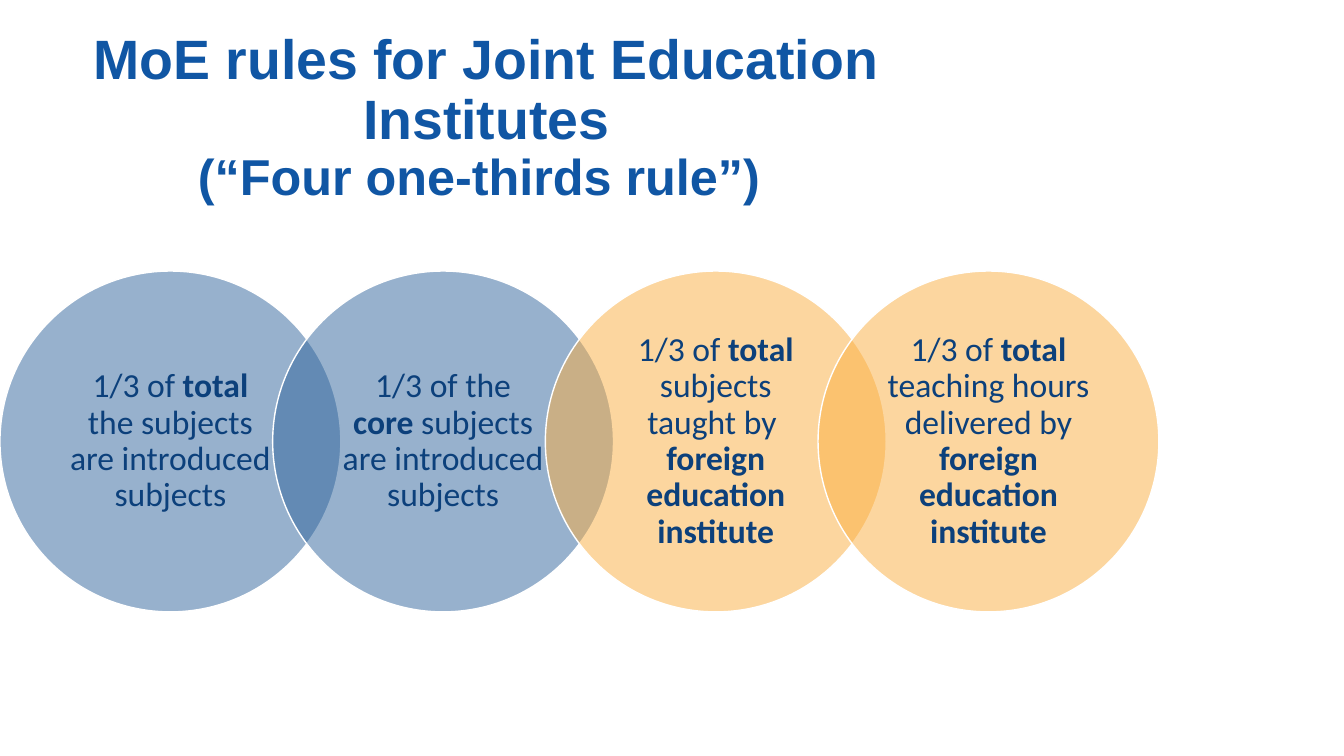
"""Build the slide on the four one-thirds rule for Joint Education Institutes."""
from lxml import etree
from pptx import Presentation
from pptx.dml.color import RGBColor
from pptx.enum.shapes import MSO_SHAPE
from pptx.enum.text import MSO_ANCHOR, PP_ALIGN
from pptx.oxml.ns import qn
from pptx.util import Cm, Pt

OVAL = MSO_SHAPE.OVAL
MIDDLE = MSO_ANCHOR.MIDDLE
CENTER = PP_ALIGN.CENTER

COLORS = {
    "title": "1056A4",
    "text": "0C407B",
    "subjects": "30659C",
    "foreign": "FBAF41",
    "outline": "FFFFFF",
}


def add_text(slide, paragraphs, left, top, width, height, *, font, color,
             margin_x=0.25, margin_y=0.13):
    """Add centred paragraphs, each a list of (text, size, bold) runs."""
    box = slide.shapes.add_textbox(Cm(left), Cm(top), Cm(width), Cm(height))
    frame = box.text_frame
    frame.word_wrap = True
    frame.vertical_anchor = MIDDLE
    frame.margin_left = frame.margin_right = Cm(margin_x)
    frame.margin_top = frame.margin_bottom = Cm(margin_y)
    for index, runs in enumerate(paragraphs):
        paragraph = frame.paragraphs[0] if index == 0 else frame.add_paragraph()
        paragraph.alignment = CENTER
        paragraph.line_spacing = 0.9
        for text, size, bold in runs:
            if text == "\n":
                paragraph.add_line_break()
                continue
            run = paragraph.add_run()
            run.text = text
            run.font.name = font
            run.font.size = Pt(size)
            run.font.bold = bold
            run.font.color.rgb = RGBColor.from_string(COLORS[color])


presentation = Presentation()
presentation.slide_width = Cm(33.87)
presentation.slide_height = Cm(19.05)
slide = presentation.slides.add_slide(presentation.slide_layouts[6])

title = [[
    ("MoE rules for Joint Education Institutes", 39.6, True),
    ("\n", 39.6, True),
    ("(“Four one-thirds rule”) ", 36, True),
]]
add_text(slide, title, 1.14, 1.68, 22.23, 2.64, font="Arial", color="title")

SIZE = 24
rules = [
    ("subjects", [[("1/3 of ", SIZE, False), ("total ", SIZE, True),
                   ("the subjects are introduced subjects", SIZE, False)]]),
    ("subjects", [[("1/3 of the ", SIZE, False), ("core ", SIZE, True),
                   ("subjects are introduced subjects", SIZE, False)]]),
    ("foreign", [[("1/3 of ", SIZE, False), ("total ", SIZE, True),
                  ("subjects taught by ", SIZE, False)],
                 [("foreign education institute", SIZE, True)]]),
    ("foreign", [[("1/3 of ", SIZE, False), ("total ", SIZE, True),
                  ("teaching hours delivered by ", SIZE, False),
                  ("foreign education institute", SIZE, True)]]),
]

DIAMETER = 8.59
PITCH = 0.8 * DIAMETER
CIRCLE_TOP = 6.83
LABEL_SIZE = 6.07
INSET = (DIAMETER - LABEL_SIZE) / 2

for index, (fill_color, label) in enumerate(rules):
    left = index * PITCH
    circle = slide.shapes.add_shape(OVAL, Cm(left), Cm(CIRCLE_TOP), Cm(DIAMETER), Cm(DIAMETER))
    circle.shadow.inherit = False
    circle.fill.solid()
    circle.fill.fore_color.rgb = RGBColor.from_string(COLORS[fill_color])
    fill_element = circle.fill._xPr.find(qn("a:solidFill"))
    etree.SubElement(fill_element[0], qn("a:alpha"), val="50000")
    circle.line.color.rgb = RGBColor.from_string(COLORS["outline"])
    circle.line.width = Pt(1)
    add_text(slide, label, left + INSET, CIRCLE_TOP + INSET, LABEL_SIZE, LABEL_SIZE,
             font="Calibri", color="text", margin_x=0.48, margin_y=0.08)

presentation.save("out.pptx")
